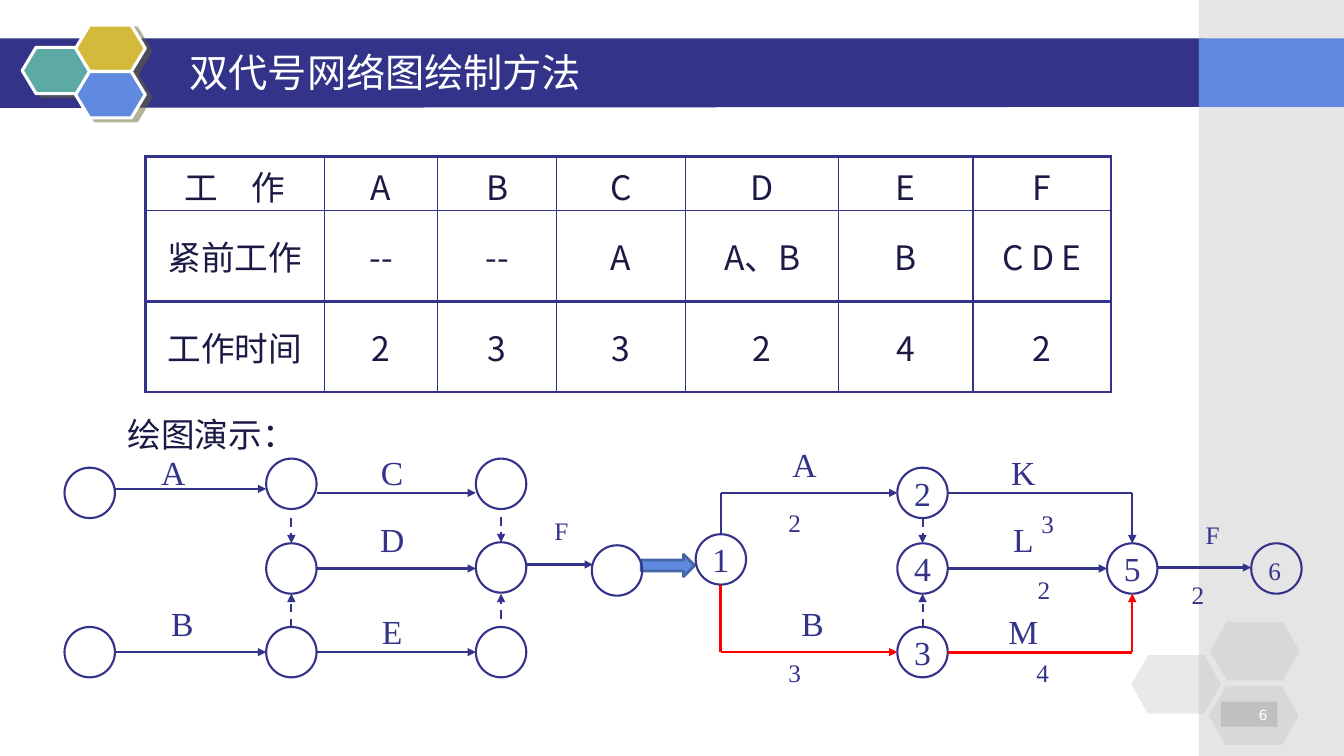
from dataclasses import dataclass
from typing import Optional

from lxml import etree
from pptx import Presentation
from pptx import util as u
from pptx.dml.color import RGBColor
from pptx.enum import dml, shapes, text
from pptx.oxml import ns


@dataclass(frozen=True)
class Theme:
    navy: str = "333389"
    ink: str = "1A1A44"
    blue: str = "5F8ADF"
    arrow_edge: str = "4666A5"
    teal: str = "5DA9A5"
    gold: str = "D4BA3A"
    gray: str = "C0C0C0"
    shade: str = "666633"
    white: str = "FFFFFF"
    red: str = "FF0000"
    sans: str = "Noto Sans CJK SC"
    serif: str = "Times New Roman"
    number_font: str = "DejaVu Sans"
    title: float = 28
    large: float = 24
    small: float = 18
    number: float = 10
    thin: float = 1
    line: float = 1.5
    thick: float = 2.25


@dataclass(frozen=True)
class Block:
    kind: shapes.MSO_SHAPE
    x: float
    y: float
    w: float
    h: float
    fill: str
    alpha: int = 100
    edge: Optional[str] = None
    edge_width: float = 0
    adj: Optional[float] = None
    shadow: bool = False


@dataclass(frozen=True)
class Node:
    x: float
    y: float
    label: str = ""


@dataclass(frozen=True)
class Label:
    x: float
    y: float
    text: str
    w: float = 0.5


@dataclass(frozen=True)
class Edge:
    x1: float
    y1: float
    x2: float
    y2: float
    color: str = Theme.navy
    width: float = Theme.line
    dashed: bool = False
    arrow: bool = True


T = Theme()
RECT, HEX, OVAL = shapes.MSO_SHAPE.RECTANGLE, shapes.MSO_SHAPE.HEXAGON, shapes.MSO_SHAPE.OVAL
LEFT, CENTER, RIGHT = text.PP_ALIGN.LEFT, text.PP_ALIGN.CENTER, text.PP_ALIGN.RIGHT
TOP, MIDDLE = text.MSO_ANCHOR.TOP, text.MSO_ANCHOR.MIDDLE

BLOCKS = [
    Block(RECT, 11.89, 0, 1.44, 7.5, T.gray, alpha=40),
    Block(RECT, 11.89, 0.38, 1.44, 0.68, T.blue),
    *(Block(HEX, x, y, 0.69, 0.46, c, edge=T.white, edge_width=T.thick, adj=0.3, shadow=True)
      for x, y, c in [(0.22, 0.47, T.teal), (0.75, 0.25, T.gold), (0.75, 0.71, T.blue)]),
    *(Block(HEX, x, y, 0.89, 0.58, T.gray, alpha=35, adj=0.286)
      for x, y in [(11.22, 6.5), (12, 6.17), (11.99, 6.81)]),
    Block(shapes.MSO_SHAPE.RIGHT_ARROW, 6.36, 5.5, 0.53, 0.22, T.blue, edge=T.arrow_edge, edge_width=2),
]
NODES = [
    Node(0.64, 4.64), Node(2.64, 4.55), Node(4.72, 4.55), Node(2.64, 5.39), Node(4.72, 5.38),
    Node(0.64, 6.22), Node(2.64, 6.22), Node(4.72, 6.22), Node(5.87, 5.41),
    Node(6.9, 5.3, "1"), Node(8.9, 4.64, "2"), Node(8.9, 6.22, "3"),
    Node(8.9, 5.39, "4"), Node(10.98, 5.39, "5"),
]
TASKS = [
    Label(1.47, 4.47, "A"), Label(3.64, 4.47, "C"), Label(3.64, 5.14, "D"),
    Label(1.56, 5.97, "B"), Label(3.64, 6.05, "E"),
    Label(7.73, 4.39, "A"), Label(9.9, 4.47, "K"), Label(9.9, 5.14, "L"),
    Label(7.81, 5.97, "B"), Label(9.9, 6.05, "M"),
]
NOTES = [
    Label(5.4, 5.06, "F", 0.3), Label(7.72, 4.98, "2", 0.36), Label(7.72, 6.47, "3", 0.55),
    Label(10.23, 4.99, "3", 0.31), Label(10.2, 5.65, "2", 0.19), Label(10.18, 6.47, "4", 0.37),
    Label(11.86, 5.1, "F", 0.3), Label(11.72, 5.7, "2", 0.31),
]
EDGES = [
    Edge(1.14, 4.85, 2.64, 4.85), Edge(3.14, 4.89, 4.72, 4.89), Edge(3.14, 5.64, 4.72, 5.64),
    Edge(1.14, 6.47, 2.64, 6.47), Edge(3.14, 6.47, 4.72, 6.47), Edge(5.22, 5.6, 5.88, 5.6),
    *(Edge(x, y1, x, y2, dashed=True) for x, y1, y2 in [
        (2.89, 5.14, 5.39), (2.89, 6.22, 5.89), (4.97, 5.13, 5.38),
        (4.97, 6.14, 5.89), (9.15, 5.14, 5.39), (9.15, 6.22, 5.89)]),
    Edge(7.15, 5.3, 7.15, 4.89, arrow=False), Edge(7.15, 4.89, 8.9, 4.89),
    Edge(7.15, 5.8, 7.15, 6.47, T.red, T.thick, arrow=False), Edge(7.15, 6.47, 8.9, 6.47, T.red),
    Edge(9.4, 4.89, 11.23, 4.89, arrow=False), Edge(11.23, 4.89, 11.23, 5.39),
    Edge(9.4, 6.47, 11.23, 6.47, T.red, T.thick, arrow=False), Edge(11.23, 6.47, 11.23, 5.89, T.red),
    Edge(9.4, 5.64, 10.98, 5.64), Edge(11.48, 5.63, 12.41, 5.63),
]
COLUMNS = [1.78, 1.12, 1.18, 1.28, 1.52, 1.33, 1.37]
ROWS = [0.54, 0.9, 0.9]
CELLS = [
    ["工　作", "A", "B", "C", "D", "E", "F"],
    ["紧前工作", "--", "--", "A", "A、B", "B", "C D E"],
    ["工作时间", "2", "3", "3", "2", "4", "2"],
]


def rgb(color: str) -> RGBColor:
    return RGBColor.from_string(color)


def sub(parent, tag: str, **attrs):
    return etree.SubElement(parent, ns.qn(tag), {k: str(v) for k, v in attrs.items()})


def write(tf, words: str, size: float, color: str, font: str, align=CENTER, anchor=MIDDLE) -> None:
    tf.text = words
    tf.vertical_anchor = anchor
    p = tf.paragraphs[0]
    p.alignment = align
    for r in p.runs:
        r.font.size, r.font.name, r.font.bold = u.Pt(size), font, False
        r.font.color.rgb = rgb(color)
        sub(r._r.get_or_add_rPr(), "a:ea", typeface=font)


def add_block(s, b: Block):
    sp = s.shapes.add_shape(b.kind, *map(u.Inches, (b.x, b.y, b.w, b.h)))
    sp.shadow.inherit = False
    sp.fill.solid()
    sp.fill.fore_color.rgb = rgb(b.fill)
    if b.alpha < 100:
        sub(sp._element.spPr.find(".//" + ns.qn("a:srgbClr")), "a:alpha", val=b.alpha * 1000)
    if b.edge:
        sp.line.color.rgb, sp.line.width = rgb(b.edge), u.Pt(b.edge_width)
    else:
        sp.line.fill.background()
    if b.adj is not None:
        sp.adjustments[0] = b.adj
    if b.shadow:
        effects = sp._element.spPr.find(ns.qn("a:effectLst"))
        outer = sub(effects, "a:outerShdw", dist=u.Pt(4.5), dir=27 * 60000, algn="ctr", rotWithShape=0)
        sub(sub(outer, "a:srgbClr", val=T.shade), "a:alpha", val=50000)
    return sp


def add_oval(s, x: float, y: float, w: float, h: float, outlined: bool):
    sp = s.shapes.add_shape(OVAL, *map(u.Inches, (x, y, w, h)))
    sp.shadow.inherit = False
    sp.fill.background()
    if outlined:
        sp.line.color.rgb, sp.line.width = rgb(T.navy), u.Pt(T.line)
    else:
        sp.line.fill.background()
    sp.text_frame.word_wrap = False
    return sp


def add_edge(s, e: Edge) -> None:
    c = s.shapes.add_connector(shapes.MSO_CONNECTOR.STRAIGHT, *map(u.Inches, (e.x1, e.y1, e.x2, e.y2)))
    c.line.color.rgb, c.line.width = rgb(e.color), u.Pt(e.width)
    if e.dashed:
        c.line.dash_style = dml.MSO_LINE.DASH
    if e.arrow:
        sub(c.line._get_or_add_ln(), "a:tailEnd", type="triangle")
    sub(c._element.spPr, "a:effectLst")


def add_schedule(s) -> None:
    frame = s.shapes.add_table(len(ROWS), len(COLUMNS), *map(u.Inches, (1.44, 1.55, sum(COLUMNS), sum(ROWS))))
    table = frame.table
    table.first_row = table.horz_banding = False
    for col, w in zip(table.columns, COLUMNS):
        col.width = u.Inches(w)
    for i, h in enumerate(ROWS):
        table.rows[i].height = u.Inches(h)
        for j, words in enumerate(CELLS[i]):
            cell = table.cell(i, j)
            write(cell.text_frame, words, T.large, T.ink, T.sans)
            cell.vertical_anchor = MIDDLE
            cell.fill.background()
            tcPr = cell._tc.get_or_add_tcPr()
            heavy = {"a:lnL": j == 0, "a:lnR": j >= 5, "a:lnT": i == 0, "a:lnB": i > 0}
            for k, (tag, is_heavy) in enumerate(heavy.items()):
                ln = sub(tcPr, tag, w=u.Pt(T.thick if is_heavy else T.thin))
                sub(sub(ln, "a:solidFill"), "a:srgbClr", val=T.navy)
                tcPr.insert(k, ln)


def main() -> None:
    prs = Presentation()
    prs.slide_width, prs.slide_height = u.Inches(13.33), u.Inches(7.5)
    s = prs.slides.add_slide(prs.slide_layouts[5])
    fb = s.shapes.build_freeform(u.Inches(-0.01), u.Inches(0.38))
    fb.add_line_segments([(u.Inches(x), u.Inches(y)) for x, y in [(11.94, 0.38), (11.93, 1.06), (-0.01, 1.07)]])
    band = fb.convert_to_shape()
    band.shadow.inherit = False
    band.fill.solid()
    band.fill.fore_color.rgb = rgb(T.navy)
    band.line.fill.background()
    for b in BLOCKS:
        add_block(s, b)
    number = add_block(s, Block(RECT, 12.11, 6.96, 0.56, 0.25, T.gray))
    write(number.text_frame, "6", T.number, T.white, T.number_font, RIGHT, TOP)
    for n in NODES:
        sp = add_oval(s, n.x, n.y, 0.5, 0.5, True)
        if n.label:
            write(sp.text_frame, n.label, T.large, T.navy, T.serif)
    last = add_oval(s, 12.41, 5.39, 0.5, 0.5, True)
    write(last.text_frame, "6", T.small, T.navy, T.serif, LEFT, TOP)
    for e in EDGES:
        add_edge(s, e)
    for t in TASKS:
        write(add_oval(s, t.x, t.y, t.w, 0.42, False).text_frame, t.text, T.large, T.navy, T.serif)
    caption = add_oval(s, 1.78, 3.97, 0.64, 0.67, False)
    write(caption.text_frame, "绘图演示：", T.large, T.ink, T.sans)
    for t in NOTES:
        tf = s.shapes.add_textbox(*map(u.Inches, (t.x, t.y, t.w, 0.4))).text_frame
        tf.word_wrap = True
        write(tf, t.text, T.small, T.navy, T.serif, LEFT, TOP)
    add_schedule(s)
    title = s.shapes.title
    title.left, title.top, title.width, title.height = map(u.Inches, (1.78, 0.42, 9.67, 0.58))
    write(title.text_frame, "双代号网络图绘制方法", T.title, T.white, T.sans, LEFT)
    s.shapes._spTree.append(title._element)
    prs.save("out.pptx")


if __name__ == "__main__":
    main()
